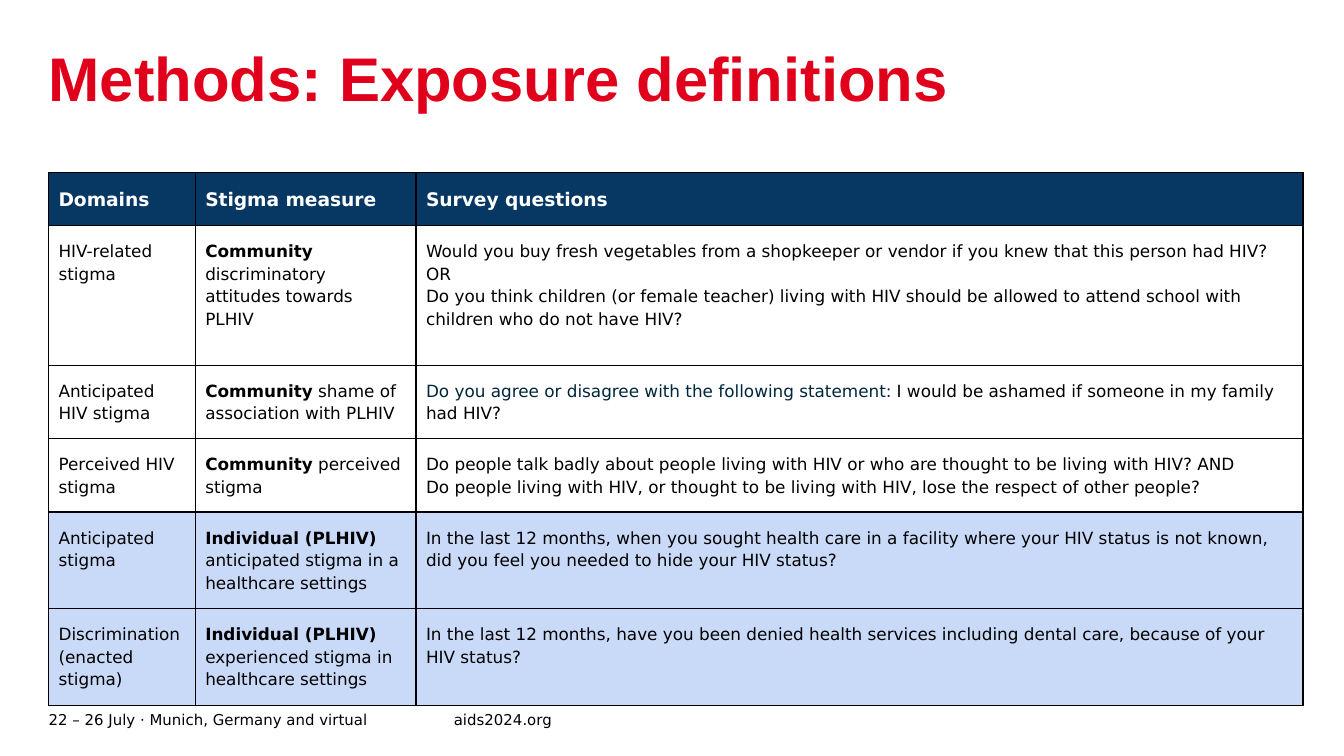
from lxml import etree
from pptx import Presentation
from pptx.dml.color import RGBColor
from pptx.enum.text import MSO_ANCHOR
from pptx.oxml.ns import qn
from pptx.util import Pt

TOP = MSO_ANCHOR.TOP
MIDDLE = MSO_ANCHOR.MIDDLE

RED = RGBColor(0xE0, 0x00, 0x1B)
NAVY = RGBColor(0x07, 0x37, 0x63)
PALE_BLUE = RGBColor(0xC9, 0xDA, 0xF8)
INK = RGBColor(0x00, 0x26, 0x3A)
BLACK = RGBColor(0x00, 0x00, 0x00)
WHITE = RGBColor(0xFF, 0xFF, 0xFF)

TITLE_FONT = "Arial"
BODY_FONT = "DejaVu Sans"

COLUMN_WIDTHS = [78.6, 118.3, 475.2]
HEADINGS = ["Domains", "Stigma measure", "Survey questions"]
DEFINITIONS = [
    (75, WHITE, "HIV-related stigma",
     "Community", " discriminatory attitudes towards PLHIV",
     [["Would you buy fresh vegetables from a shopkeeper or vendor if you knew that this person had HIV? OR"],
      ["Do you think children (or female teacher) living with HIV should be allowed to attend school with "
       "children who do not have HIV?"]]),
    (38.7, WHITE, "Anticipated HIV stigma",
     "Community", " shame of association with PLHIV",
     [[("Do you agree or disagree with the following statement: ", {"color": INK}),
       "I would be ashamed if someone in my family had HIV?"]]),
    (38.7, WHITE, "Perceived HIV stigma",
     "Community", " perceived stigma",
     [["Do people talk badly about people living with HIV or who are thought to be living with HIV? AND"],
      ["Do people living with HIV, or thought to be living with HIV, lose the respect of other people?"]]),
    (50.8, PALE_BLUE, "Anticipated stigma",
     "Individual (PLHIV)", " anticipated stigma in a healthcare settings",
     [["In the last 12 months, when you sought health care in a facility where your HIV status is not known, "
       "did you feel you needed to hide your HIV status?"]]),
    (50.8, PALE_BLUE, "Discrimination (enacted stigma)",
     "Individual (PLHIV)", " experienced stigma in healthcare settings",
     [["In the last 12 months, have you been denied health services including dental care, because of your "
       "HIV status?"]]),
]


def write_text(frame, paragraphs, size=9, font=BODY_FONT, color=BLACK, bold=False, spacing=1.0):
    frame.word_wrap = True
    for index, pieces in enumerate(paragraphs):
        paragraph = frame.add_paragraph() if index else frame.paragraphs[0]
        paragraph.line_spacing = spacing
        for piece in pieces:
            words, changes = (piece, {}) if isinstance(piece, str) else piece
            run = paragraph.add_run()
            run.text = words
            run.font.size = Pt(size)
            run.font.name = font
            run.font.bold = changes.get("bold", bold)
            run.font.color.rgb = changes.get("color", color)


def add_label(slide, left, top, width, height, words, anchor=TOP, **text_format):
    label = slide.shapes.add_textbox(Pt(left), Pt(top), Pt(width), Pt(height))
    frame = label.text_frame
    frame.margin_left = frame.margin_right = frame.margin_top = frame.margin_bottom = 0
    frame.vertical_anchor = anchor
    write_text(frame, [[words]], **text_format)


def add_borders(cell):
    properties = cell._tc.get_or_add_tcPr()
    for side in ("lnL", "lnR", "lnT", "lnB"):
        line = etree.SubElement(properties, qn(f"a:{side}"), w=str(Pt(0.75)))
        fill = etree.SubElement(line, qn("a:solidFill"))
        etree.SubElement(fill, qn("a:srgbClr"), val=str(BLACK))


def fill_cell(cell, paragraphs, background, **text_format):
    add_borders(cell)
    cell.fill.solid()
    cell.fill.fore_color.rgb = background
    cell.margin_left = cell.margin_right = Pt(5.4)
    cell.margin_top = cell.margin_bottom = Pt(7.2)
    cell.vertical_anchor = TOP
    write_text(cell.text_frame, paragraphs, spacing=1.15, **text_format)


def add_title(slide, left, top, width, height):
    add_label(slide, left, top, width, height, "Methods: Exposure definitions",
              size=33, font=TITLE_FONT, color=RED, bold=True, spacing=0.9)


def add_definitions(slide, left, top, header_height):
    heights = [header_height] + [definition[0] for definition in DEFINITIONS]
    table = slide.shapes.add_table(len(heights), len(COLUMN_WIDTHS), Pt(left), Pt(top),
                                   Pt(sum(COLUMN_WIDTHS)), Pt(sum(heights))).table
    table.horz_banding = False
    for column, width in zip(table.columns, COLUMN_WIDTHS):
        column.width = Pt(width)
    for row, height in zip(table.rows, heights):
        row.height = Pt(height)
    for cell, heading in zip(table.rows[0].cells, HEADINGS):
        fill_cell(cell, [[heading]], NAVY, size=10, color=WHITE, bold=True)
    for number, definition in enumerate(DEFINITIONS, start=1):
        _, background, domain, level, measure, questions = definition
        contents = [[[domain]], [[(level, {"bold": True}), measure]], questions]
        for cell, paragraphs in zip(table.rows[number].cells, contents):
            fill_cell(cell, paragraphs, background)


def add_footer(slide, left, top, height):
    date_width = 217.1
    add_label(slide, left, top, date_width, height,
              "22 – 26 July · Munich, Germany and virtual", anchor=MIDDLE, size=8)
    add_label(slide, left + date_width, top, 104.4, height, "aids2024.org", anchor=MIDDLE, size=8)


def main():
    deck = Presentation()
    deck.slide_width = Pt(720)
    deck.slide_height = Pt(405)
    slide = deck.slides.add_slide(deck.slide_layouts[6])
    margin = 26
    add_footer(slide, margin, 379, 13)
    add_title(slide, margin, 26, 525, 72)
    add_definitions(slide, margin, 92.5, 27.8)
    deck.save("out.pptx")


if __name__ == "__main__":
    main()
